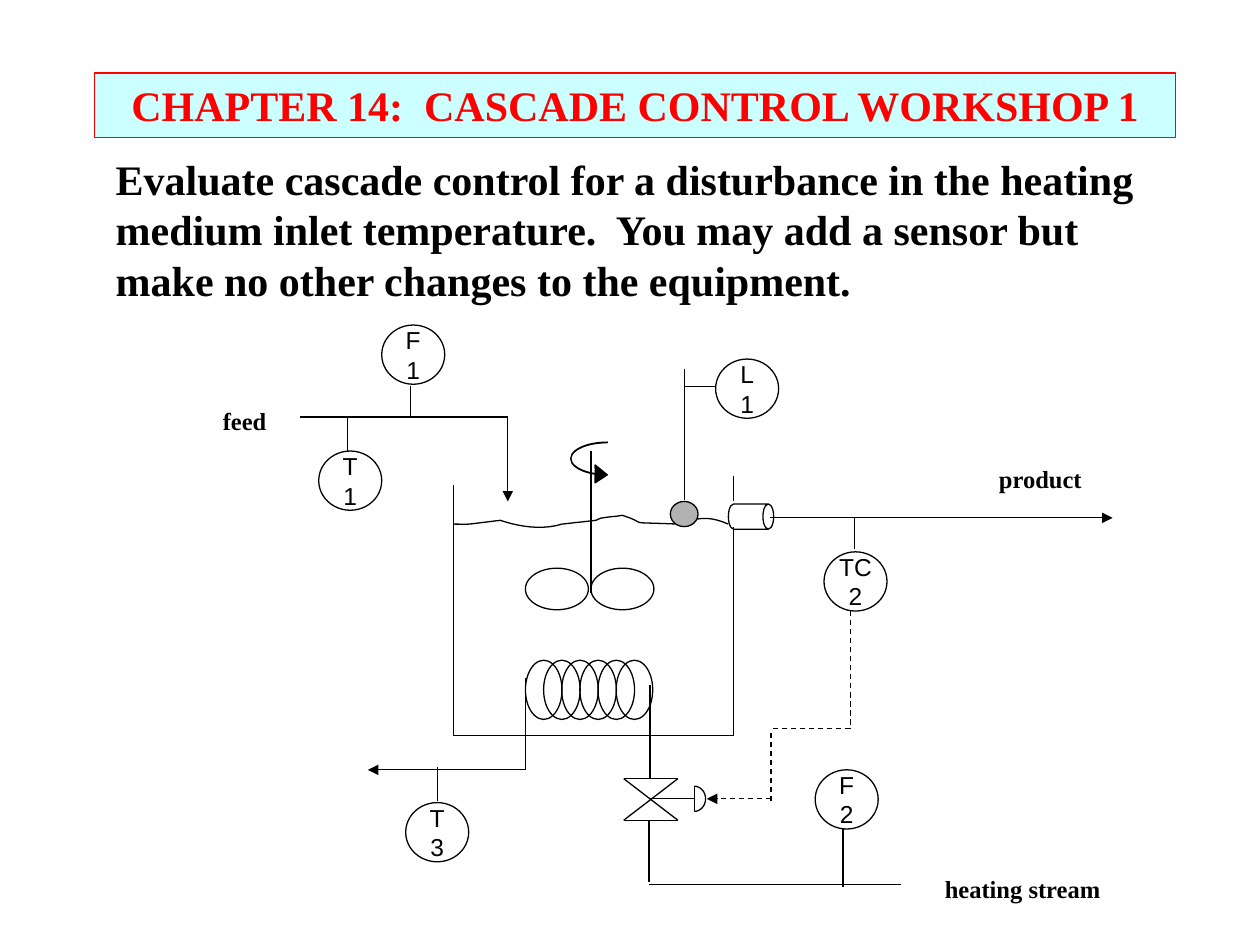
import math

from lxml import etree
from pptx import Presentation
from pptx import util as u
from pptx.dml.color import RGBColor
from pptx.enum import dml, shapes, text
from pptx.oxml.ns import qn

PX = 9144  # 100 px to the inch
BLACK = RGBColor(0x00, 0x00, 0x00)
RED = RGBColor(0xFF, 0x00, 0x00)
PALE_CYAN = RGBColor(0xCC, 0xFF, 0xFF)
GREY = RGBColor(0xB2, 0xB2, 0xB2)
SERIF, SANS = "Times New Roman", "Arial"
KIND = shapes.MSO_SHAPE

TITLE = "CHAPTER 14:  CASCADE CONTROL WORKSHOP 1"
TASK = ("Evaluate cascade control for a disturbance in the heating medium inlet "
        "temperature.  You may add a sensor but make no other changes to the equipment.")
TITLE_BOX = (75, 58, 858, 51)
TASK_BOX = (82, 117, 850, 130)

STREAM_LABELS = [
    ("feed", (167, 317, 55, 33)),
    ("product", (783, 363, 86, 33)),
    ("heating stream", (740, 689, 144, 33)),
]

INSTRUMENT_SIZE = (50, 47)
INSTRUMENTS = [  # letters, number, left, top
    ("TC", "2", 654, 438),
    ("T", "1", 253, 358),
    ("F", "1", 303, 258),
    ("F", "2", 647, 611),
    ("T", "3", 322, 637),
    ("L", "1", 568, 285),
]

# Lines run from x, y to x, y
TANK = [(360, 385, 360, 584), (360, 584, 582, 584),
        (582, 584, 582, 418), (582, 398, 582, 378)]
STIRRER_SHAFT = [(469, 358, 469, 471)]
COIL_ENDS = [(516, 544, 516, 618), (417, 538, 417, 611)]
VALVE = [(538, 618, 495, 618), (538, 651, 495, 651),
         (538, 651, 495, 618), (538, 618, 495, 651),
         (517, 634, 551, 634), (551, 624, 551, 644)]
PIPES = [(238, 331, 403, 331), (515, 651, 515, 700), (515, 702, 715, 702)]
FLOWS = [(403, 331, 403, 398), (611, 411, 883, 411), (417, 611, 292, 611)]
TAPS = [(678, 436, 678, 410), (669, 658, 669, 704), (276, 359, 276, 330),
        (326, 306, 326, 332), (347, 636, 347, 609),
        (543, 397, 543, 293), (568, 307, 543, 307)]
SIGNAL = [(675, 485, 675, 578), (675, 578, 611, 578), (612, 636, 612, 579)]
SIGNAL_END = [(612, 634, 561, 634)]

COIL_LEFT, COIL_TOP, COIL_PITCH, COIL_TURNS = 417, 524, 14.4, 6
IMPELLER_BLADES = [(417, 451, 50, 33), (469, 451, 50, 33)]
ROTATION_ARROW = (453, 351, 29, 33)
LEVEL_FLOAT = (532, 398, 22, 20)
OUTLET = (586, 392, 20, 36)
ACTUATOR_CENTRE, ACTUATOR_RADII = (551, 634), (9, 10)

WATER_START = (578, 416)
WATER_CURVES = [  # two control points and an end point
    ((562, 409), (554, 411), (538, 416)),
    ((492, 414), (518, 417), (494, 409)),
    ((489, 410), (484, 410), (479, 411)),
    ((477, 411), (475, 412), (473, 413)),
    ((464, 414), (446, 416), (446, 416)),
    ((430, 421), (412, 418), (397, 413)),
    ((364, 417), (376, 416), (360, 416)),
]


def emu(values):
    return [round(v * PX) for v in values]


def write(frame, *lines, size=14, font=SERIF, color=BLACK, bold=False,
          align=None, anchor=None, wrap=False):
    frame.word_wrap = wrap
    frame.auto_size = text.MSO_AUTO_SIZE.NONE
    if anchor is not None:
        frame.vertical_anchor = anchor
    for i, line in enumerate(lines):
        paragraph = frame.add_paragraph() if i else frame.paragraphs[0]
        if align is not None:
            paragraph.alignment = align
        run = paragraph.add_run()
        run.text = line
        run.font.size, run.font.name = u.Pt(size), font
        run.font.bold, run.font.color.rgb = bold, color


def outline(shape, fill=None, color=BLACK):
    if fill is None:
        shape.fill.background()
    else:
        shape.fill.solid()
        shape.fill.fore_color.rgb = fill
    shape.line.color.rgb = color
    shape.line.width = u.Pt(0.75)


def draw(canvas, kind, box, fill=None, adjust=()):
    shape = canvas.add_shape(kind, *emu(box))
    shape.shadow.inherit = False
    outline(shape, fill)
    for i, value in enumerate(adjust):
        shape.adjustments[i] = value
    return shape


def connect(canvas, lines, arrow=False, dashed=False):
    for ends in lines:
        line = canvas.add_connector(shapes.MSO_CONNECTOR.STRAIGHT, *emu(ends))
        line.line.color.rgb = BLACK
        line.line.width = u.Pt(0.75)
        if dashed:
            line.line.dash_style = dml.MSO_LINE.DASH
        if arrow:
            etree.SubElement(line.line._get_or_add_ln(), qn("a:tailEnd"), type="triangle")
        etree.SubElement(line._element.spPr, qn("a:effectLst"))


def trace(canvas, points):
    """Draw an open outline through the points."""
    start, *rest = [emu(point) for point in points]
    builder = canvas.build_freeform(*start)
    builder.add_line_segments(rest, close=False)
    shape = builder.convert_to_shape()
    shape.shadow.inherit = False
    outline(shape)


def bezier_points(start, curves, steps=10):
    points = [start]
    for a, b, end in curves:
        for t in (i / steps for i in range(1, steps + 1)):
            s = 1 - t
            points.append(tuple(s**3 * p + 3 * s * s * t * q + 3 * s * t * t * r + t**3 * e
                                for p, q, r, e in zip(start, a, b, end)))
        start = end
    return points


def arc_points(centre, radii, steps=16):
    """Right half of an ellipse, from top to bottom."""
    angles = [math.pi * (i / steps - 0.5) for i in range(steps + 1)]
    return [(centre[0] + radii[0] * math.cos(a), centre[1] + radii[1] * math.sin(a))
            for a in angles]


def draw_flowsheet(canvas):
    for i in range(COIL_TURNS):
        draw(canvas, KIND.OVAL, (COIL_LEFT + i * COIL_PITCH, COIL_TOP, 29, 47))
    connect(canvas, COIL_ENDS + TANK)
    draw(canvas, KIND.CAN, OUTLET, adjust=[0.426]).rotation = 90
    connect(canvas, STIRRER_SHAFT)
    for blade in IMPELLER_BLADES:
        draw(canvas, KIND.OVAL, blade)
    trace(canvas, bezier_points(WATER_START, WATER_CURVES))
    draw(canvas, KIND.CURVED_RIGHT_ARROW, ROTATION_ARROW, BLACK, [0.014, 0.488, 0.333])
    connect(canvas, VALVE + PIPES + TAPS)
    connect(canvas, FLOWS, arrow=True)
    trace(canvas, arc_points(ACTUATOR_CENTRE, ACTUATOR_RADII))
    draw(canvas, KIND.OVAL, LEVEL_FLOAT, GREY)
    connect(canvas, SIGNAL, dashed=True)
    connect(canvas, SIGNAL_END, arrow=True, dashed=True)
    for letters, number, left, top in INSTRUMENTS:
        bubble = draw(canvas, KIND.OVAL, (left, top, *INSTRUMENT_SIZE))
        write(bubble.text_frame, letters, number, font=SANS,
              align=text.PP_ALIGN.CENTER, anchor=text.MSO_ANCHOR.MIDDLE)
    for stream, box in STREAM_LABELS:
        write(canvas.add_textbox(*emu(box)).text_frame, stream, bold=True)


def main():
    deck = Presentation()
    deck.slide_width, deck.slide_height = emu((1000, 750))
    slide = deck.slides.add_slide(deck.slide_layouts[5])
    title = slide.shapes.title
    title.left, title.top, title.width, title.height = emu(TITLE_BOX)
    outline(title, PALE_CYAN, RED)
    write(title.text_frame, TITLE, size=24, color=RED, bold=True, wrap=True,
          align=text.PP_ALIGN.CENTER, anchor=text.MSO_ANCHOR.MIDDLE)
    draw_flowsheet(slide.shapes.add_group_shape().shapes)
    task = slide.shapes.add_textbox(*emu(TASK_BOX))
    write(task.text_frame, TASK, size=24, bold=True, wrap=True)
    deck.save("out.pptx")


if __name__ == "__main__":
    main()
